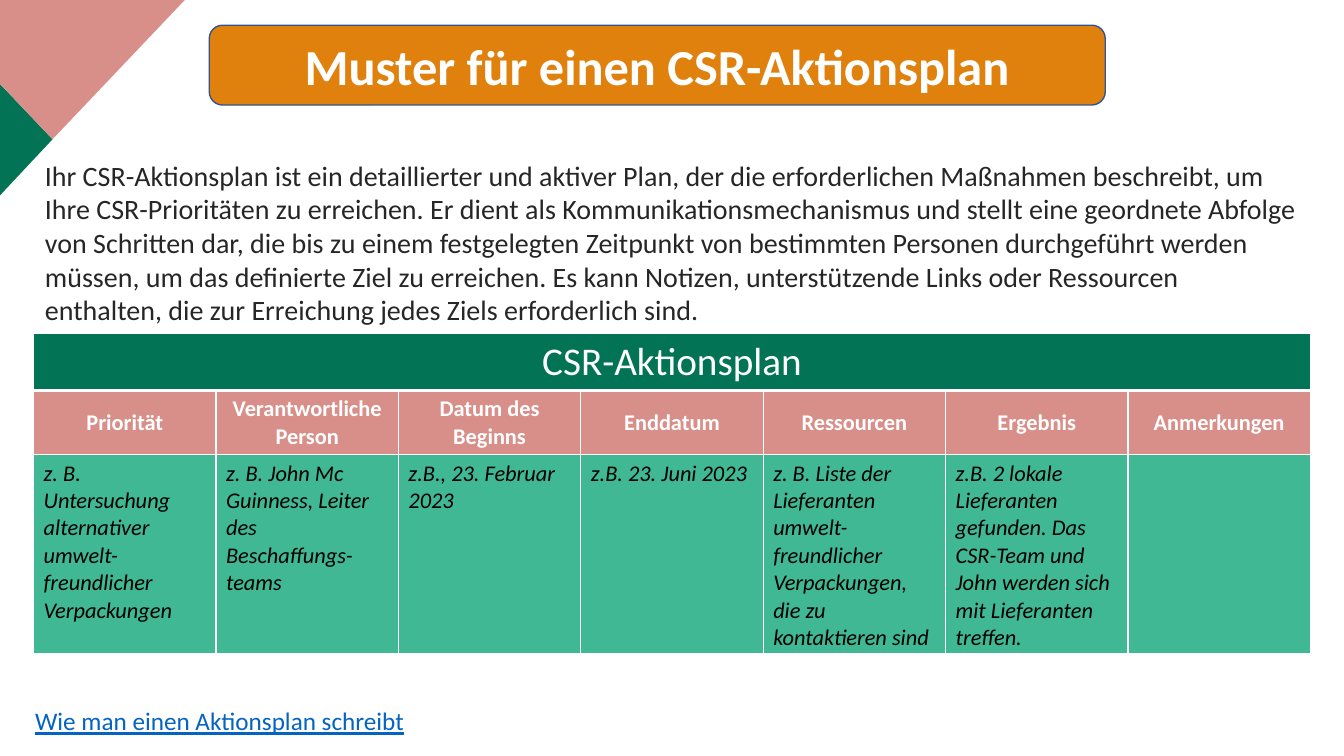
from dataclasses import dataclass

from lxml import etree
from pptx import Presentation
from pptx import util as u
from pptx.dml.color import RGBColor
from pptx.enum import shapes, text
from pptx.oxml.ns import qn


@dataclass(frozen=True)
class Theme:
    font: str = "Calibri"
    white: str = "FFFFFF"
    black: str = "000000"
    body: str = "262626"
    link: str = "0563C1"
    green: str = "027354"
    mint: str = "40B894"
    rose: str = "D98F89"
    orange: str = "E0810E"
    outline: str = "325491"
    title_size: int = 36
    heading_size: int = 28
    body_size: int = 20
    link_size: int = 18
    cell_size: int = 16


@dataclass(frozen=True)
class Box:
    left: float
    top: float
    width: float
    height: float

    def lengths(self) -> tuple:
        return tuple(u.Pt(value) for value in (self.left, self.top, self.width, self.height))


@dataclass(frozen=True)
class TextStyle:
    size: int
    color: str
    bold: bool = False
    italic: bool = False
    underline: bool = False
    align: text.PP_ALIGN = text.PP_ALIGN.LEFT


@dataclass(frozen=True)
class Corner:
    color: str
    points: tuple


@dataclass(frozen=True)
class TextItem:
    box: Box
    content: str
    style: TextStyle


@dataclass(frozen=True)
class TableRow:
    height: float
    fill: str
    style: TextStyle
    anchor: text.MSO_ANCHOR
    labels: tuple
    bottom_line: float = 1


THEME = Theme()
CENTER = text.PP_ALIGN.CENTER
TOP, MIDDLE = text.MSO_ANCHOR.TOP, text.MSO_ANCHOR.MIDDLE
COLUMN_COUNT = 7

CORNERS = (
    Corner(THEME.green, ((0, 60), (37.5, 99.5), (0, 139.5))),
    Corner(THEME.rose, ((0, 0), (132, 0), (37.5, 99.5), (0, 60))),
)
TITLE_BOX = Box(149.5, 18, 640, 57)
TITLE_STYLE = TextStyle(THEME.title_size, THEME.white, bold=True, align=CENTER)
TEXT_ITEMS = (
    TextItem(
        Box(25, 109.5, 910, 130),
        "Ihr CSR-Aktionsplan ist ein detaillierter und aktiver Plan, der die erforderlichen "
        "Maßnahmen beschreibt, um Ihre CSR-Prioritäten zu erreichen. Er dient als "
        "Kommunikationsmechanismus und stellt eine geordnete Abfolge von Schritten dar, die bis "
        "zu einem festgelegten Zeitpunkt von bestimmten Personen durchgeführt werden müssen, um "
        "das definierte Ziel zu erreichen. Es kann Notizen, unterstützende Links oder Ressourcen "
        "enthalten, die zur Erreichung jedes Ziels erforderlich sind.",
        TextStyle(THEME.body_size, THEME.body),
    ),
    TextItem(
        Box(18, 500.5, 360, 29),
        "Wie man einen Aktionsplan schreibt",
        TextStyle(THEME.link_size, THEME.link, underline=True),
    ),
)
TABLE_BOX = Box(24, 238, 912, 228)
TABLE_ROWS = (
    TableRow(40, THEME.green, TextStyle(THEME.heading_size, THEME.white, align=CENTER), TOP,
             ("CSR-Aktionsplan",), 3),
    TableRow(46, THEME.rose, TextStyle(THEME.cell_size, THEME.white, bold=True, align=CENTER),
             MIDDLE,
             ("Priorität", "Verantwortliche Person", "Datum des Beginns", "Enddatum",
              "Ressourcen", "Ergebnis", "Anmerkungen")),
    TableRow(142, THEME.mint, TextStyle(THEME.cell_size, THEME.black, italic=True), TOP,
             ("z. B. Untersuchung alternativer umwelt-freundlicher Verpackungen",
              "z. B. John Mc Guinness, Leiter des Beschaffungs-teams",
              "z.B., 23. Februar 2023",
              "z.B. 23. Juni 2023",
              "z. B. Liste der Lieferanten umwelt-freundlicher Verpackungen, die zu "
              "kontaktieren sind",
              "z.B. 2 lokale Lieferanten gefunden. Das CSR-Team und John werden sich mit "
              "Lieferanten treffen.",
              "")),
)


def set_fill(target, color: str) -> None:
    target.fill.solid()
    target.fill.fore_color.rgb = RGBColor.from_string(color)


def write(frame, content: str, style: TextStyle) -> None:
    frame.word_wrap = True
    paragraph = frame.paragraphs[0]
    paragraph.text = content
    paragraph.alignment = style.align
    font = paragraph.font
    font.name, font.size = THEME.font, u.Pt(style.size)
    font.bold, font.italic, font.underline = style.bold, style.italic, style.underline
    font.color.rgb = RGBColor.from_string(style.color)


def add_corner(slide, corner: Corner) -> None:
    start, *others = corner.points
    builder = slide.shapes.build_freeform(u.Pt(start[0]), u.Pt(start[1]))
    builder.add_line_segments([(u.Pt(x), u.Pt(y)) for x, y in others], close=True)
    shape = builder.convert_to_shape()
    shape.shadow.inherit = False
    set_fill(shape, corner.color)
    shape.line.fill.background()


def add_title(slide, content: str) -> None:
    banner = slide.shapes.add_shape(shapes.MSO_SHAPE.ROUNDED_RECTANGLE, *TITLE_BOX.lengths())
    banner.shadow.inherit = False
    set_fill(banner, THEME.orange)
    banner.line.color.rgb = RGBColor.from_string(THEME.outline)
    banner.line.width = u.Pt(1)
    title = slide.shapes.title
    title.left, title.top, title.width, title.height = TITLE_BOX.lengths()
    title.text_frame.auto_size = text.MSO_AUTO_SIZE.NONE
    title.text_frame.vertical_anchor = MIDDLE
    write(title.text_frame, content, TITLE_STYLE)
    banner._element.addnext(title._element)


def add_text(slide, item: TextItem) -> None:
    box = slide.shapes.add_textbox(*item.box.lengths())
    write(box.text_frame, item.content, item.style)


def set_borders(cell, bottom_width: float) -> None:
    properties = cell._tc.get_or_add_tcPr()
    widths = {"a:lnL": 1, "a:lnR": 1, "a:lnT": 1, "a:lnB": bottom_width}
    for position, (tag, width) in enumerate(widths.items()):
        line = etree.Element(qn(tag), w=str(u.Pt(width)))
        fill = etree.SubElement(line, qn("a:solidFill"))
        etree.SubElement(fill, qn("a:srgbClr"), val=THEME.white)
        properties.insert(position, line)


def add_plan_table(slide) -> None:
    table = slide.shapes.add_table(len(TABLE_ROWS), COLUMN_COUNT, *TABLE_BOX.lengths()).table
    table.first_row = table.horz_banding = False
    for column in table.columns:
        column.width = u.Pt(TABLE_BOX.width / COLUMN_COUNT)
    table.cell(0, 0).merge(table.cell(0, COLUMN_COUNT - 1))
    for row_index, row in enumerate(TABLE_ROWS):
        table.rows[row_index].height = u.Pt(row.height)
        for column_index in range(COLUMN_COUNT):
            cell = table.cell(row_index, column_index)
            set_fill(cell, row.fill)
            set_borders(cell, row.bottom_line)
            cell.vertical_anchor = row.anchor
            if column_index < len(row.labels):
                write(cell.text_frame, row.labels[column_index], row.style)


def main() -> None:
    presentation = Presentation()
    presentation.slide_width, presentation.slide_height = u.Pt(960), u.Pt(540)
    slide = presentation.slides.add_slide(presentation.slide_layouts[5])
    for corner in CORNERS:
        add_corner(slide, corner)
    add_title(slide, "Muster für einen CSR-Aktionsplan")
    for item in TEXT_ITEMS:
        add_text(slide, item)
    add_plan_table(slide)
    presentation.save("out.pptx")


if __name__ == "__main__":
    main()
